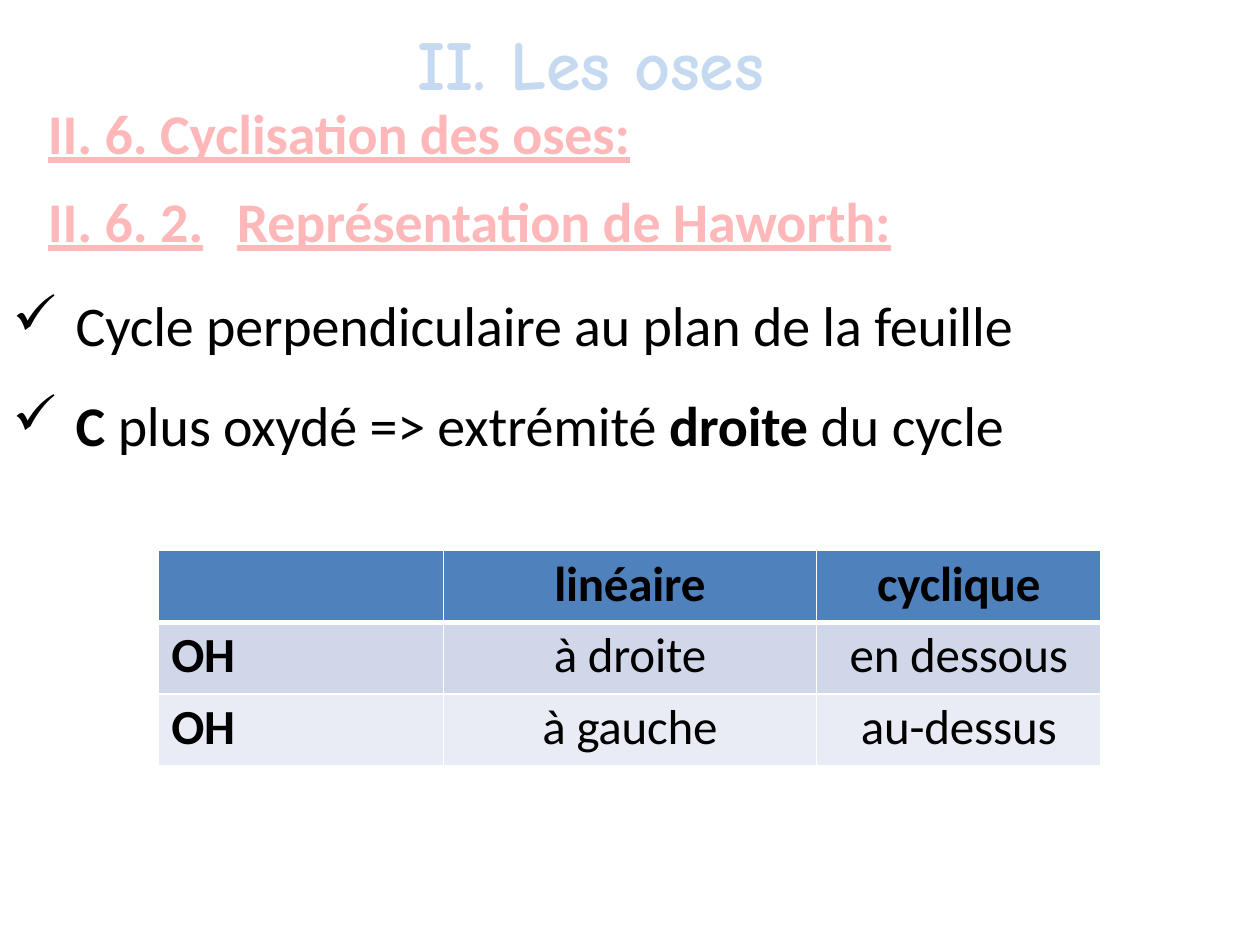
from lxml import etree
from pptx import Presentation
from pptx import util as u
from pptx.dml.color import RGBColor
from pptx.enum import text
from pptx.oxml.ns import qn

BLACK, WHITE, PINK, PALE_BLUE = "000000", "FFFFFF", "FFB8BA", "C5D9F0"
TITLE = "II. Les oses"
# (space before in points, text)
HEADINGS = [
    (0, "II. 6. Cyclisation des oses:"),
    (11.9, "II. 6. 2.\tReprésentation de Haworth:"),
]
# (space before in points, [(text, bold)])
POINTS = [
    (20.9, [("Cycle perpendiculaire au plan de la feuille", False)]),
    (19.2, [("C ", True), ("plus oxydé => extrémité ", False),
            ("droite ", True), ("du cycle", False)]),
]
ROWS = [
    ("", "linéaire", "cyclique"),
    ("OH", "à droite", "en dessous"),
    ("OH", "à gauche", "au-dessus"),
]
ROW_FILLS = ["4F81BC", "D0D7E8", "E9ECF4"]
COLUMN_WIDTHS = [2.26, 2.96, 2.26]
ROW_HEIGHT = 0.57


def rgb(value):
    return RGBColor.from_string(value)


def add_run(paragraph, words, size, color, bold, font="Calibri", underline=None):
    run = paragraph.add_run()
    run.text = words
    run.font.size, run.font.name = u.Pt(size), font
    run.font.bold, run.font.underline = bold, underline
    run.font.color.rgb = rgb(color)
    run.font._element.set("spc", "-10")


def add_text_frame(slide, left, top, width, height, inset_top):
    frame = slide.shapes.add_textbox(*map(u.Inches, (left, top, width, height))).text_frame
    frame.word_wrap = True
    frame.margin_left = frame.margin_right = frame.margin_bottom = 0
    frame.margin_top = u.Inches(inset_top)
    return frame


def format_paragraph(paragraph, before, left, hanging, tab, bullet=None):
    """Set the spacing, indent, tab stop and optional bullet."""
    if before:
        paragraph.space_before = u.Pt(before)
    properties = paragraph._p.get_or_add_pPr()
    properties.set("marL", str(u.Inches(left)))
    properties.set("indent", str(-u.Inches(hanging)))
    if bullet:
        etree.SubElement(properties, qn("a:buChar"), char=bullet)
    tabs = etree.SubElement(properties, qn("a:tabLst"))
    etree.SubElement(tabs, qn("a:tab"), pos=str(u.Inches(tab)), algn="l")


def set_borders(cell, widths):
    """Draw white borders; widths are points for left, right, top, bottom."""
    properties = cell._tc.get_or_add_tcPr()
    for index, (side, width) in enumerate(zip("LRTB", widths)):
        line = etree.Element(qn(f"a:ln{side}"), w=str(u.Pt(width)))
        fill = etree.SubElement(line, qn("a:solidFill"))
        etree.SubElement(fill, qn("a:srgbClr"), val=WHITE)
        properties.insert(index, line)


def add_body(slide):
    frame = add_text_frame(slide, 0.09, 0.6, 9.91, 3.6, 0.18)
    paragraph = frame.paragraphs[0]
    for index, (before, words) in enumerate(HEADINGS):
        if index:
            paragraph = frame.add_paragraph()
        format_paragraph(paragraph, before, 0.29, 0, 1.73)
        add_run(paragraph, words, 32, PINK, True, underline=True)
    for before, runs in POINTS:
        paragraph = frame.add_paragraph()
        format_paragraph(paragraph, before, 0.51, 0.5, 0.51, "✓")
        for words, bold in runs:
            add_run(paragraph, words, 32, BLACK, bold)


def add_comparison_table(slide):
    table = slide.shapes.add_table(
        len(ROWS), len(COLUMN_WIDTHS), u.Inches(1.26), u.Inches(4.37),
        u.Inches(sum(COLUMN_WIDTHS)), u.Inches(ROW_HEIGHT * len(ROWS))).table
    for column, width in zip(table.columns, COLUMN_WIDTHS):
        column.width = u.Inches(width)
    for r, row in enumerate(ROWS):
        table.rows[r].height = u.Inches(ROW_HEIGHT)
        for c, words in enumerate(row):
            cell = table.cell(r, c)
            cell.margin_left = u.Inches(0 if c else 0.1)
            cell.margin_right = cell.margin_bottom = 0
            cell.margin_top = u.Inches(0.03)
            set_borders(cell, (1, 1, 3 if r == 1 else 1, 3 if r == 0 else 1))
            cell.fill.solid()
            cell.fill.fore_color.rgb = rgb(ROW_FILLS[r])
            if words:
                paragraph = cell.text_frame.paragraphs[0]
                paragraph.alignment = text.PP_ALIGN.CENTER if c else text.PP_ALIGN.LEFT
                add_run(paragraph, words, 28, BLACK, r == 0 or c == 0)


def main():
    presentation = Presentation()
    presentation.slide_width, presentation.slide_height = u.Inches(10), u.Inches(7.5)
    slide = presentation.slides.add_slide(presentation.slide_layouts[6])
    title = add_text_frame(slide, 3.31, 0.15, 3.39, 0.69, 0.01)
    add_run(title.paragraphs[0], TITLE, 40, PALE_BLUE, True, "Comic Neue")
    add_body(slide)
    add_comparison_table(slide)
    presentation.save("out.pptx")


if __name__ == "__main__":
    main()
